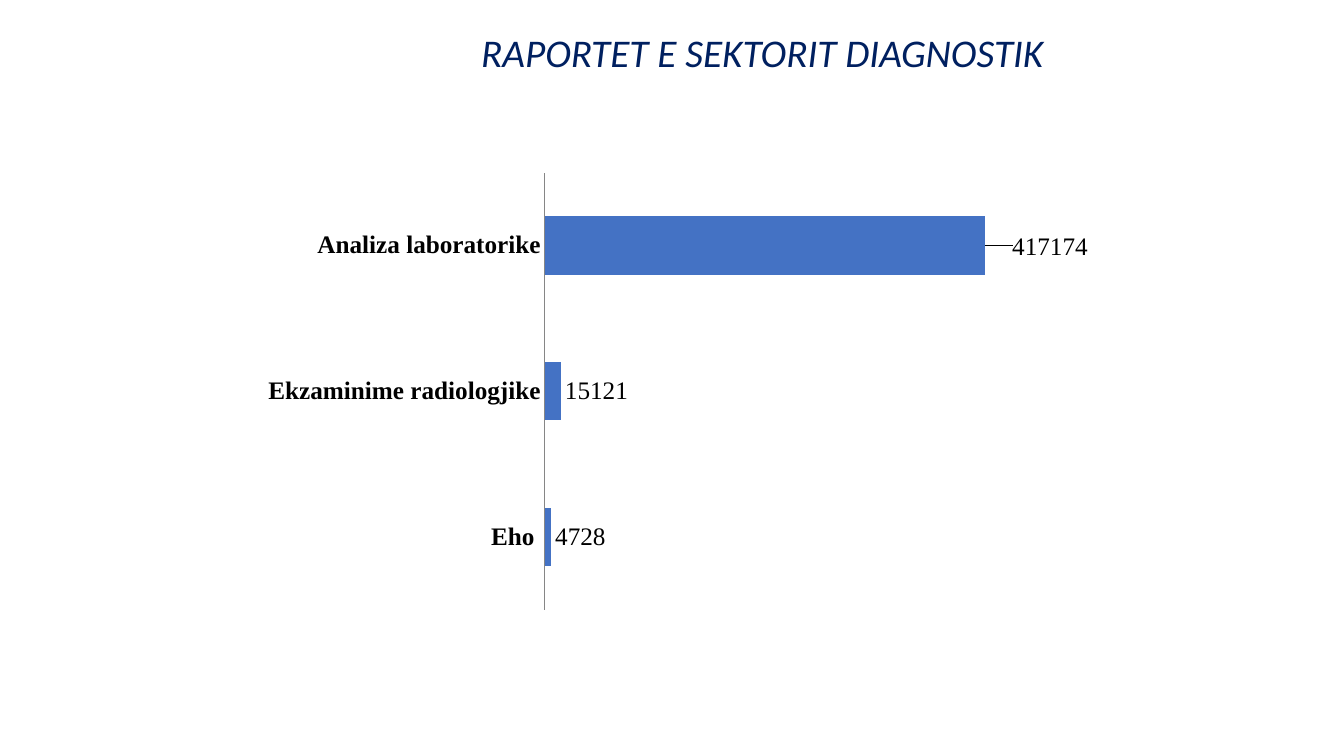
from lxml import etree
from pptx import Presentation
from pptx.chart.data import CategoryChartData
from pptx.dml.color import RGBColor
from pptx.enum.chart import XL_CHART_TYPE as Kind, XL_LABEL_POSITION as Pos
from pptx.enum.chart import XL_TICK_MARK as Tick
from pptx.enum.text import MSO_ANCHOR as Anchor, PP_ALIGN as Align
from pptx.oxml import parse_xml
from pptx.util import Inches, Pt

TITLE = "RAPORTET E SEKTORIT DIAGNOSTIK"
# category, bar value, label
EXAMS = [
    ("Eho ", 11300, "4728"),
    ("Ekzaminime radiologjike", 28100, "15121"),
    ("Analiza laboratorike", 760000, "417174"),
]
TITLE_BOX = (3.06, 0.23, 9, 0.57)
CHART_BOX = (1.77, 1.6, 9.56, 4.56)
PLOT = {"x": 0.38, "y": 0.025, "w": 0.481, "h": 0.951}
LABEL_SHIFT = {"x": 0.024, "y": 0.004}
NAVY, BLUE, GRAY, BLACK = "002060", "4472C4", "868686", "000000"
SERIF = "Times New Roman"
NS = "http://schemas.openxmlformats.org/drawingml/2006/chart"
NO_LEADERS = f"""<c:extLst xmlns:c="{NS}">
<c:ext uri="{{CE6537A1-D6FC-4f65-9D91-7224C49458BB}}"
 xmlns:c15="http://schemas.microsoft.com/office/drawing/2012/chart">
<c15:showLeaderLines val="0"/></c:ext></c:extLst>"""


def color(code):
    return RGBColor.from_string(code)


def style(font, name=SERIF, size=18, fill=BLACK, bold=False, italic=False):
    font.name, font.size = name, Pt(size)
    font.bold, font.italic = bold, italic
    font.color.rgb = color(fill)


def write(frame, text, align=None, **fmt):
    para = frame.paragraphs[0]
    if align is not None:
        para.alignment = align
    run = para.add_run()
    run.text = text
    style(run.font, **fmt)


def set_layout(parent, index, sizes, inner=False):
    """Give a chart part a manual layout in fractions of the chart."""
    for old in parent.findall(f"{{{NS}}}layout"):
        parent.remove(old)
    root = parse_xml(f'<c:layout xmlns:c="{NS}"><c:manualLayout/></c:layout>')
    parts = [("layoutTarget", "inner"), ("xMode", "edge"), ("yMode", "edge")] if inner else []
    for tag, val in parts + list(sizes.items()):
        etree.SubElement(root[0], f"{{{NS}}}{tag}").set("val", str(val))
    parent.insert(index, root)


def add_labels(bars):
    labels = bars.data_labels
    labels.show_value = True
    style(labels.font, bold=True)
    for i, (_, _, text) in enumerate(EXAMS):
        label = bars.points[i].data_label
        write(label.text_frame, text)
        label.position = Pos.OUTSIDE_END


def add_bars(slide):
    data = CategoryChartData()
    data.categories = [name for name, _, _ in EXAMS]
    data.add_series("Series 1", [val for _, val, _ in EXAMS])
    chart = slide.shapes.add_chart(
        Kind.BAR_CLUSTERED, *map(Inches, CHART_BOX), data).chart
    chart.has_legend = chart.has_title = False
    style(chart.font, name="Calibri")

    cats, vals = chart.category_axis, chart.value_axis
    cats.major_tick_mark = cats.minor_tick_mark = Tick.NONE
    cats.format.line.color.rgb = color(GRAY)
    cats.format.line.width = Pt(0.75)
    style(cats.tick_labels.font, bold=True)
    vals.visible = vals.has_major_gridlines = False
    vals.minimum_scale, vals.maximum_scale = 0, 800000

    plot = chart.plots[0]
    plot.gap_width, plot.overlap = 150, -25
    plot.vary_by_categories = False
    bars = plot.series[0]
    bars.format.fill.solid()
    bars.format.fill.fore_color.rgb = color(BLUE)
    add_labels(bars)

    root = chart.element
    set_layout(root.find(f".//{{{NS}}}plotArea"), 0, PLOT, inner=True)
    set_layout(root.findall(f".//{{{NS}}}dLbl")[-1], 1, LABEL_SHIFT)
    group = root.find(f".//{{{NS}}}dLbls")
    for old in group.findall(f"{{{NS}}}showLeaderLines"):
        group.remove(old)
    group.append(parse_xml(NO_LEADERS))


def main():
    prs = Presentation()
    prs.slide_width, prs.slide_height = Inches(13.33), Inches(7.5)
    slide = prs.slides.add_slide(prs.slide_layouts[5])
    add_bars(slide)
    title = slide.shapes.title
    title.left, title.top, title.width, title.height = map(Inches, TITLE_BOX)
    title.text_frame.vertical_anchor = Anchor.TOP
    write(title.text_frame, TITLE, align=Align.CENTER,
          name="Calibri", size=28, fill=NAVY, italic=True)
    prs.save("out.pptx")


if __name__ == "__main__":
    main()
